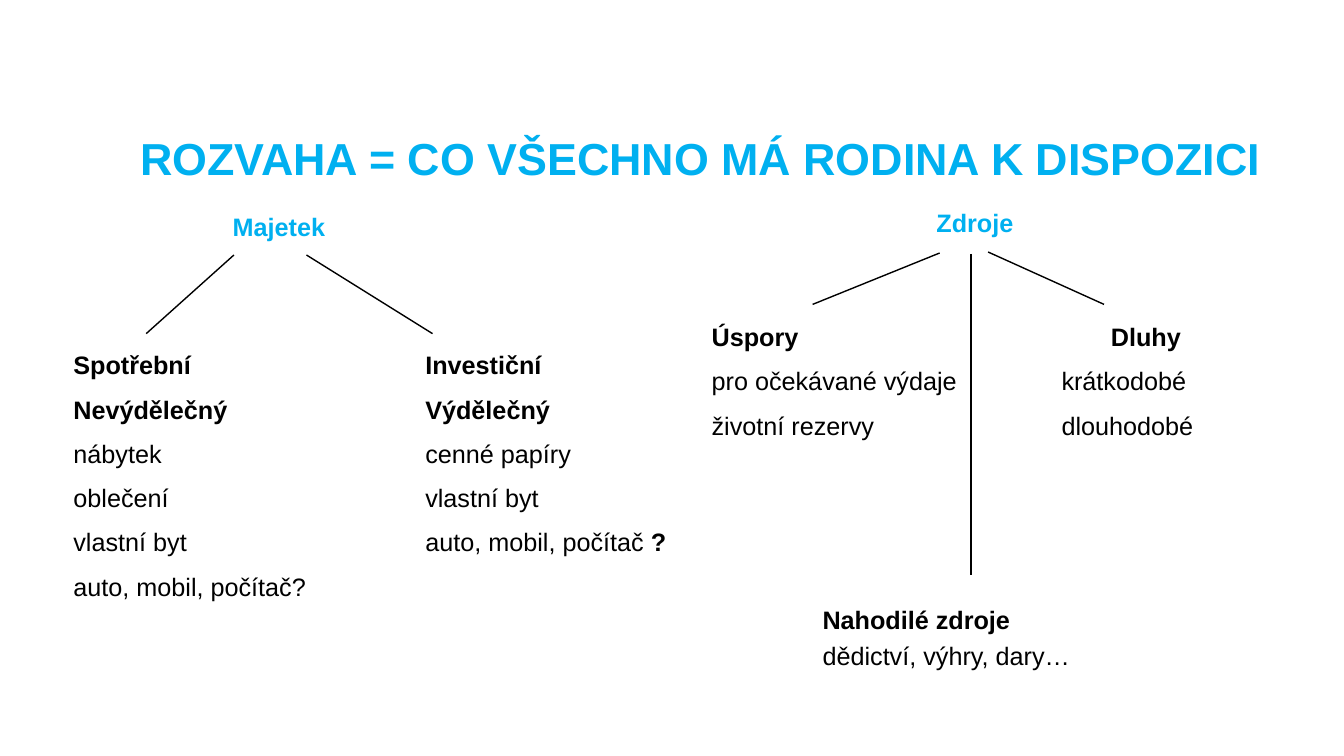
import pptx
import pptx.dml.color
import pptx.enum.shapes
import pptx.enum.text
import pptx.oxml.ns
import pptx.util
from lxml import etree

PX = 9144  # one px is a hundredth of an inch
BLUE = "00B0F0"
BLACK = "000000"


def px(num):
    return pptx.util.Emu(num * PX)


def color(hex_str):
    return pptx.dml.color.RGBColor.from_string(hex_str)


def add_box(slide, left, top, width, height):
    frame = slide.shapes.add_textbox(px(left), px(top), px(width), px(height)).text_frame
    frame.word_wrap = True
    return frame


def style(para, size, hue, bold):
    para.font.name = "Arial"
    para.font.size = pptx.util.Pt(size)
    para.font.color.rgb = color(hue)
    para.font.bold = bold


def indent(para, left):
    para._p.get_or_add_pPr().set("marL", str(px(left)))


def add_head(slide, place, text, size, shift=0):
    """Blue heading, moved right by shift."""
    frame = add_box(slide, *place)
    para = frame.paragraphs[0]
    para.text = text
    para.line_spacing = 0.9
    indent(para, shift)
    style(para, size, BLUE, True)
    return frame


def add_list(slide, place, heads, items, gap=10, shift=0):
    """Bold lines followed by plain lines."""
    frame = add_box(slide, *place)
    for num, text in enumerate(heads + items):
        para = frame.paragraphs[0] if num == 0 else frame.add_paragraph()
        para.text = text
        if num:
            para.space_before = pptx.util.Pt(gap)
        elif shift:
            indent(para, shift)
        style(para, 18, BLACK, num < len(heads))
    return frame


def add_line(slide, x1, y1, x2, y2):
    line = slide.shapes.add_connector(
        pptx.enum.shapes.MSO_CONNECTOR.STRAIGHT, px(x1), px(y1), px(x2), px(y2))
    line.line.color.rgb = color(BLACK)
    line.line.width = pptx.util.Pt(1)
    etree.SubElement(line._element.spPr, pptx.oxml.ns.qn("a:effectLst"))


def main():
    deck = pptx.Presentation()
    deck.slide_width, deck.slide_height = px(1333), px(750)
    slide = deck.slides.add_slide(deck.slide_layouts[6])

    # Title
    title = add_head(slide, (129, 77, 1135, 112),
                     "ROZVAHA = CO VŠECHNO MÁ RODINA K DISPOZICI", 32)
    title.vertical_anchor = pptx.enum.text.MSO_ANCHOR.BOTTOM

    # Two sides of the balance
    add_head(slide, (131, 208, 633, 40), "Majetek", 18, 90)
    add_head(slide, (746, 204, 580, 40), "Zdroje", 18, 173)

    # Assets
    add_list(slide, (63, 342, 317, 268), ["Spotřební", "Nevýdělečný"],
             ["nábytek", "oblečení", "vlastní byt", "auto, mobil, počítač?"])
    invest = add_list(slide, (412, 342, 317, 268), ["Investiční", "Výdělečný"],
                      ["cenné papíry", "vlastní byt", "auto, mobil, počítač "])
    mark = invest.paragraphs[-1].add_run()
    mark.text = "?"
    mark.font.bold = True

    # Sources
    add_list(slide, (696, 314, 301, 131), ["Úspory"],
             ["pro očekávané výdaje", "životní rezervy"])
    add_list(slide, (1043, 314, 231, 131), ["Dluhy"],
             ["krátkodobé", "dlouhodobé"], shift=49)
    add_list(slide, (806, 595, 417, 108), ["Nahodilé zdroje"],
             ["dědictví, výhry, dary…"], gap=4)

    # Branches
    for ends in ((232, 253, 145, 331), (304, 253, 429, 331),
                 (932, 251, 806, 302), (980, 250, 1095, 302),
                 (963, 252, 963, 570)):
        add_line(slide, *ends)

    deck.save("out.pptx")


if __name__ == "__main__":
    main()
